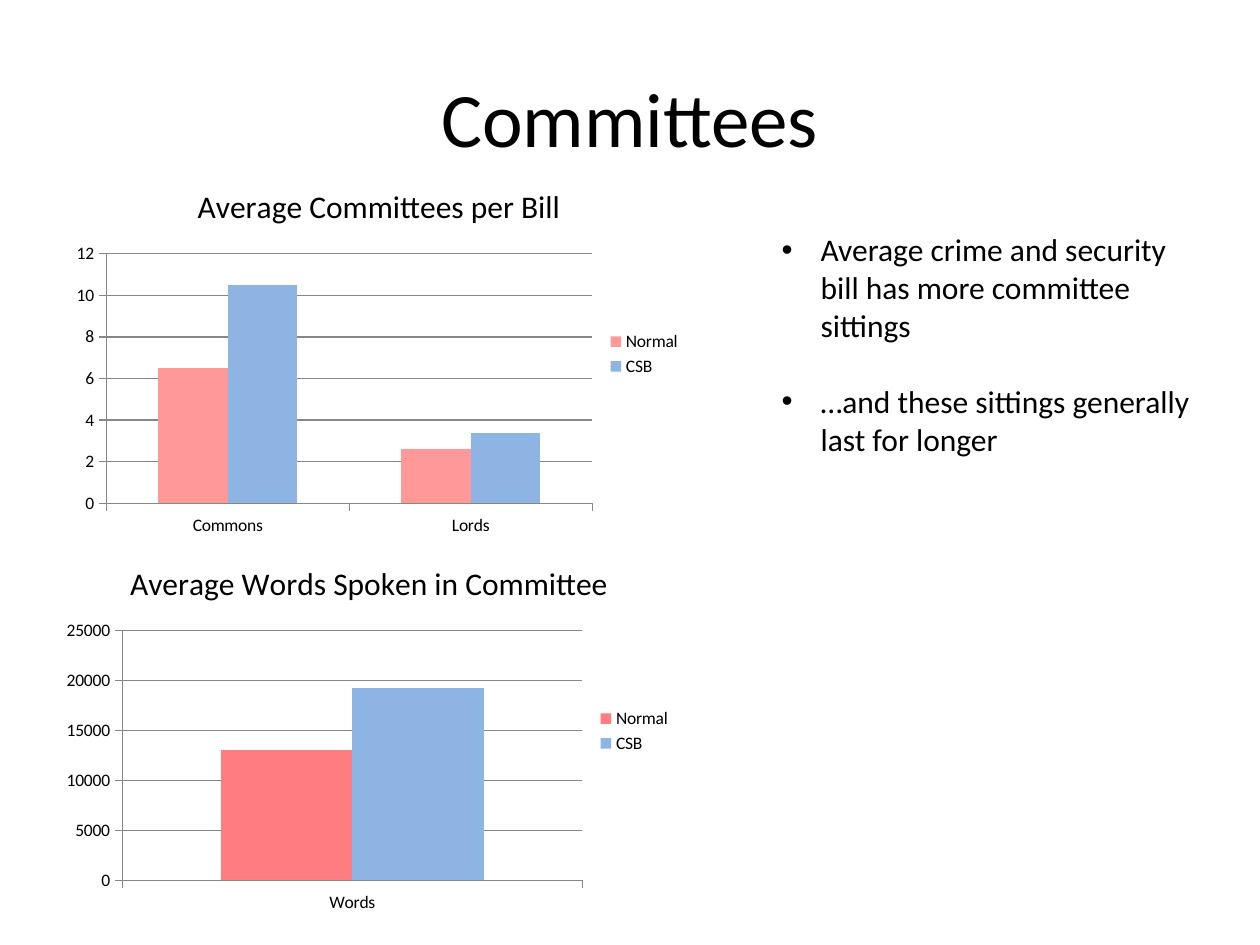
from pptx import Presentation
from pptx import util as u
from pptx.chart.data import CategoryChartData
from pptx.dml.color import RGBColor
from pptx.enum import chart as ch, text

PX = 914400 // 126
FONT, BLACK, GREY = "Calibri", "000000", "878787"

TITLE = "Committees"
POINTS = [
    "Average crime and security bill has more committee sittings",
    "…and these sittings generally last for longer",
]
CHARTS = [
    dict(title="Average Committees per Bill", at=(64, 165, 630, 378),
         categories=["Commons", "Lords"], top=12, step=2,
         series=[("Normal", [6.5, 2.6], "FF9999"),
                 ("CSB", [10.5, 3.4], "8EB4E3")]),
    dict(title="Average Words Spoken in Committee", at=(54, 542, 630, 378),
         categories=["Words"], top=25000, step=5000,
         series=[("Normal", [13000], "FF7C80"),
                 ("CSB", [19300], "8EB4E3")]),
]


def px(*lengths):
    return [u.Emu(n * PX) for n in lengths]


def color(value):
    return RGBColor.from_string(value)


def set_all(target, values):
    for name, value in values.items():
        setattr(target, name, value)


def place(shape, *box):
    set_all(shape, dict(zip(("left", "top", "width", "height"), px(*box))))


def style(font, size):
    set_all(font, dict(name=FONT, size=u.Pt(size), bold=False))
    font.color.rgb = color(BLACK)


def thin_line(line):
    line.color.rgb = color(GREY)
    line.width = u.Pt(0.75)


def add_column_chart(slide, item):
    data = CategoryChartData()
    data.categories = item["categories"]
    for name, values, _ in item["series"]:
        data.add_series(name, values)
    chart = slide.shapes.add_chart(
        ch.XL_CHART_TYPE.COLUMN_CLUSTERED, *px(*item["at"]), data).chart
    style(chart.font, 10)

    # Heading and legend
    chart.has_title = True
    heading = chart.chart_title.text_frame
    heading.text = item["title"]
    style(heading.paragraphs[0].runs[0].font, 18)
    chart.has_legend = True
    set_all(chart.legend, dict(position=ch.XL_LEGEND_POSITION.RIGHT,
                               include_in_layout=False))

    # Columns
    plot = chart.plots[0]
    set_all(plot, dict(gap_width=150, overlap=0, vary_by_categories=False))
    for series, (_, _, fill) in zip(plot.series, item["series"]):
        series.format.fill.solid()
        series.format.fill.fore_color.rgb = color(fill)

    # Axes
    scale = chart.value_axis
    set_all(scale, dict(minimum_scale=0, maximum_scale=item["top"],
                        major_unit=item["step"], has_major_gridlines=True))
    thin_line(scale.major_gridlines.format.line)
    for axis in (chart.category_axis, scale):
        axis.major_tick_mark = ch.XL_TICK_MARK.OUTSIDE
        thin_line(axis.format.line)


def main():
    deck = Presentation()
    set_all(deck, dict(slide_width=u.Inches(10), slide_height=u.Inches(7.5)))
    slide = deck.slides.add_slide(deck.slide_layouts[1])
    title, body = slide.placeholders

    # Title
    place(title, 63, 38, 1134, 157)
    title.text_frame.text = TITLE
    style(title.text_frame.paragraphs[0].runs[0].font, 44)

    # Charts
    for item in CHARTS:
        add_column_chart(slide, item)

    # Bullet points
    place(body, 769, 224, 446, 242)
    frame = body.text_frame
    frame.text = "\n".join(POINTS)
    set_all(frame, dict(word_wrap=True, auto_size=text.MSO_AUTO_SIZE.NONE))
    indent = px(39)[0]
    for i, point in enumerate(frame.paragraphs):
        point.space_before = u.Pt(22 if i else 0)
        style(point.runs[0].font, 18)
        layout = point._p.get_or_add_pPr()
        layout.set("marL", str(indent))
        layout.set("indent", str(-indent))

    deck.save("out.pptx")


if __name__ == "__main__":
    main()
